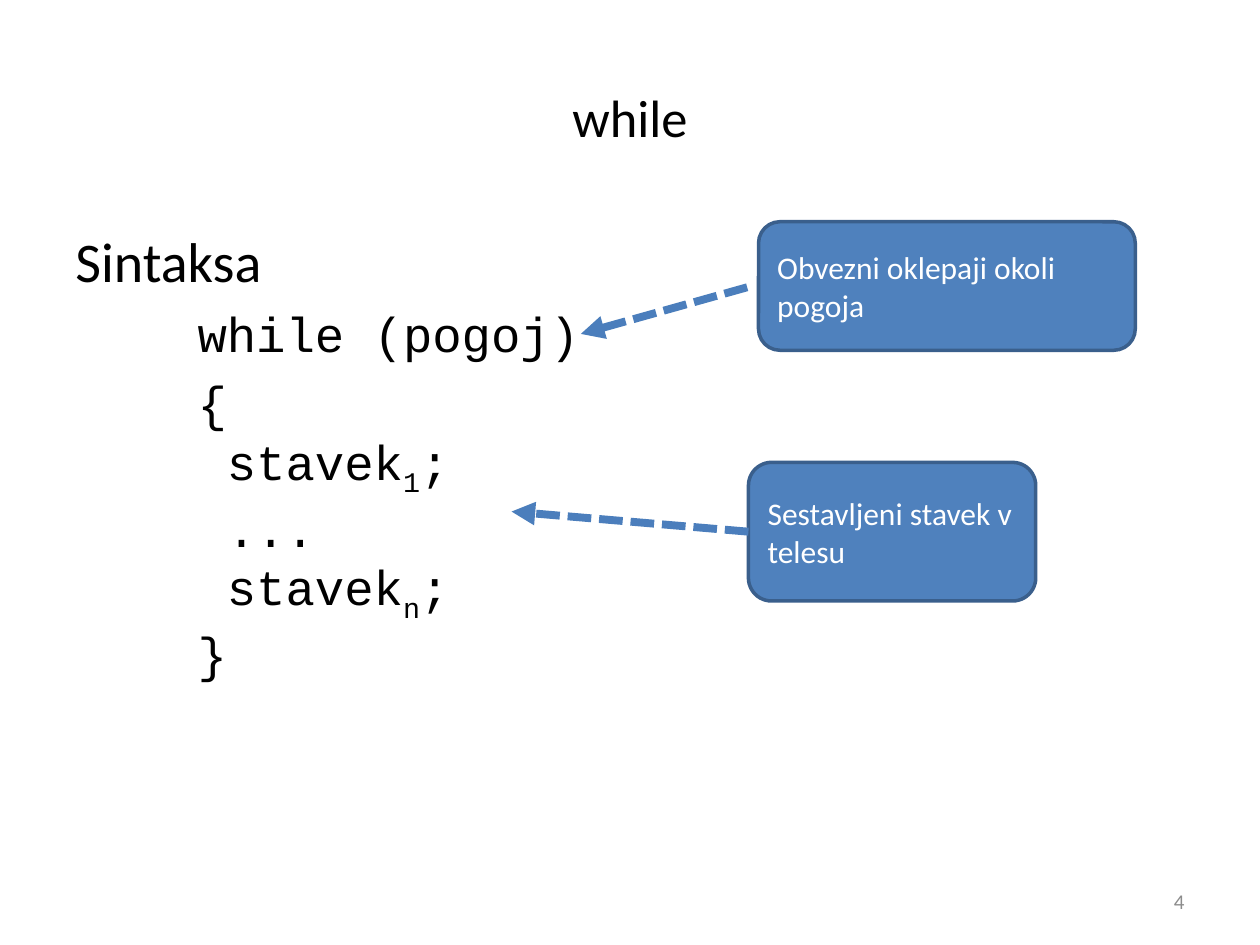
from dataclasses import dataclass

from lxml import etree
from pptx import Presentation
from pptx.dml.color import RGBColor
from pptx.enum import dml, shapes, text
from pptx.oxml.ns import qn
from pptx.util import Inches, Pt

SANS, MONO = "Calibri", "Courier New"
BLACK, WHITE, GREY = "000000", "FFFFFF", "8C8C8C"
FILL, OUTLINE, ARROW = "4F81BD", "3A5F8C", "4B7EBC"


@dataclass
class Callout:
    label: str
    box: tuple[float, float, float, float]
    tail: tuple[float, float]
    tip: tuple[float, float]


CALLOUTS = [
    Callout("Obvezni oklepaji okoli pogoja", (6.02, 1.76, 2.99, 1.02), (5.93, 2.28), (4.61, 2.65)),
    Callout("Sestavljeni stavek v telesu", (5.94, 3.67, 2.28, 1.1), (5.94, 4.22), (4.06, 4.06)),
]

# Each code line is (text, subscript, text after the subscript).
LOOP_HEAD = [("while (pogoj)", "", "")]
LOOP_BODY = [
    ("{", "", ""),
    (" stavek", "1", ";"),
    (" ...", "", ""),
    (" stavek", "n", ";"),
    ("}", "", ""),
]


def rgb(value: str) -> RGBColor:
    return RGBColor.from_string(value)


def inches(values) -> list:
    return [Inches(v) for v in values]


def add_run(p, content: str, size: float, color: str, font: str = SANS):
    r = p.add_run()
    r.text = content
    for name, value in {"name": font, "size": Pt(size)}.items():
        setattr(r.font, name, value)
    r.font.color.rgb = rgb(color)
    return r


def set_format(target, **values) -> None:
    for name, value in values.items():
        setattr(target, name, value)


def add_text_box(slide, box, anchor):
    tf = slide.shapes.add_textbox(*inches(box)).text_frame
    set_format(tf, word_wrap=True, vertical_anchor=anchor)
    return tf


def add_title(slide, content: str) -> None:
    title = slide.shapes.title
    left, top, width, height = inches((0.5, 0.3, 9, 1.25))
    set_format(title, left=left, top=top, width=width, height=height)
    title.text_frame.vertical_anchor = text.MSO_ANCHOR.MIDDLE
    p = title.text_frame.paragraphs[0]
    p.alignment = text.PP_ALIGN.CENTER
    add_run(p, content, 30, BLACK)


def add_code(tf, lines) -> None:
    """Add the lines as one indented paragraph, split by line breaks."""
    p = tf.add_paragraph()
    p.space_before = Pt(5.6)
    p._p.get_or_add_pPr().set("marL", str(Inches(0.97)))
    for i, (before, subscript, after) in enumerate(lines):
        if i:
            p.add_line_break()
        add_run(p, before, 28, BLACK, MONO)
        if subscript:
            r = add_run(p, subscript, 28, BLACK, MONO)
            r.font._element.set("baseline", "-25000")
            add_run(p, after, 28, BLACK, MONO)


def add_syntax(slide) -> None:
    tf = add_text_box(slide, (0.5, 1.75, 9, 4.95), text.MSO_ANCHOR.TOP)
    p = tf.paragraphs[0]
    p.space_before = Pt(6.4)
    add_run(p, "Sintaksa", 32, BLACK)
    for lines in (LOOP_HEAD, LOOP_BODY):
        add_code(tf, lines)


def add_slide_number(slide, number: str) -> None:
    tf = add_text_box(slide, (7.17, 6.95, 2.33, 0.4), text.MSO_ANCHOR.MIDDLE)
    p = tf.paragraphs[0]
    p.alignment = text.PP_ALIGN.RIGHT
    add_run(p, number, 12, GREY)


def add_callout_box(slide, callout: Callout) -> None:
    sp = slide.shapes.add_shape(shapes.MSO_SHAPE.ROUNDED_RECTANGLE, *inches(callout.box))
    sp.shadow.inherit = False
    sp.fill.solid()
    sp.fill.fore_color.rgb = rgb(FILL)
    sp.line.color.rgb = rgb(OUTLINE)
    sp.line.width = Pt(2)
    tf = sp.text_frame
    set_format(tf, word_wrap=True, vertical_anchor=text.MSO_ANCHOR.MIDDLE)
    p = tf.paragraphs[0]
    p.alignment = text.PP_ALIGN.LEFT
    add_run(p, callout.label, 18, WHITE)


def add_arrow(slide, callout: Callout) -> None:
    line = slide.shapes.add_connector(
        shapes.MSO_CONNECTOR.STRAIGHT, *inches(callout.tail + callout.tip))
    line.line.color.rgb = rgb(ARROW)
    set_format(line.line, width=Pt(4.5), dash_style=dml.MSO_LINE.SQUARE_DOT)
    etree.SubElement(line.line._get_or_add_ln(), qn("a:tailEnd"), type="triangle")
    etree.SubElement(line._element.spPr, qn("a:effectLst"))


def main() -> None:
    prs = Presentation()
    prs.slide_width, prs.slide_height = Inches(10), Inches(7.5)
    slide = prs.slides.add_slide(prs.slide_layouts[5])
    add_title(slide, "while")
    add_syntax(slide)
    add_slide_number(slide, "4")
    for callout in CALLOUTS:
        add_callout_box(slide, callout)
        add_arrow(slide, callout)
    prs.save("out.pptx")


if __name__ == "__main__":
    main()
